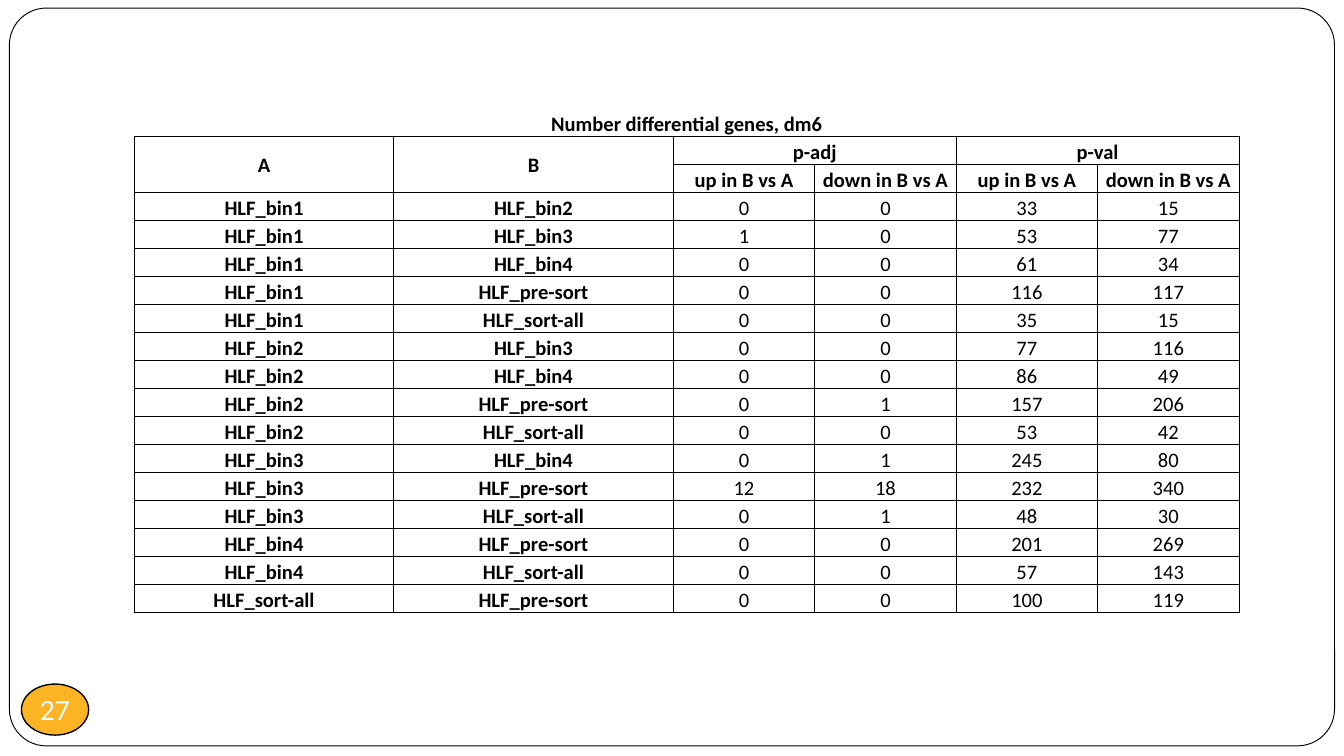
import lxml.etree
import pptx
import pptx.dml.color
import pptx.enum.shapes
import pptx.enum.text
import pptx.oxml.ns
import pptx.util
from pptx.util import Inches

BLACK = pptx.dml.color.RGBColor(0x00, 0x00, 0x00)
WHITE = pptx.dml.color.RGBColor(0xFF, 0xFF, 0xFF)
AMBER = pptx.dml.color.RGBColor(0xFC, 0xB4, 0x24)

TABLE_WIDTH = 8.22
TABLE_HEIGHT = 3.75
SAMPLE_WIDTHS = [1.93, 2.08]
COUNT_WIDTH = (TABLE_WIDTH - sum(SAMPLE_WIDTHS)) / 4
COLUMN_WIDTHS = SAMPLE_WIDTHS + [COUNT_WIDTH] * 4
DIRECTIONS = ["up in B vs A", "down in B vs A"]
HEADER_ROWS = [
    ["Number differential genes, dm6", "", "", "", "", ""],
    ["A", "B", "p-adj", "", "p-val", ""],
    ["", "", *DIRECTIONS, *DIRECTIONS],
]
GENE_ROWS = [
    ["HLF_bin1", "HLF_bin2", 0, 0, 33, 15],
    ["HLF_bin1", "HLF_bin3", 1, 0, 53, 77],
    ["HLF_bin1", "HLF_bin4", 0, 0, 61, 34],
    ["HLF_bin1", "HLF_pre-sort", 0, 0, 116, 117],
    ["HLF_bin1", "HLF_sort-all", 0, 0, 35, 15],
    ["HLF_bin2", "HLF_bin3", 0, 0, 77, 116],
    ["HLF_bin2", "HLF_bin4", 0, 0, 86, 49],
    ["HLF_bin2", "HLF_pre-sort", 0, 1, 157, 206],
    ["HLF_bin2", "HLF_sort-all", 0, 0, 53, 42],
    ["HLF_bin3", "HLF_bin4", 0, 1, 245, 80],
    ["HLF_bin3", "HLF_pre-sort", 12, 18, 232, 340],
    ["HLF_bin3", "HLF_sort-all", 0, 1, 48, 30],
    ["HLF_bin4", "HLF_pre-sort", 0, 0, 201, 269],
    ["HLF_bin4", "HLF_sort-all", 0, 0, 57, 143],
    ["HLF_sort-all", "HLF_pre-sort", 0, 0, 100, 119],
]
# First row, first column, last row, last column
MERGES = [(0, 0, 0, 5), (1, 0, 2, 0), (1, 1, 2, 1), (1, 2, 1, 3), (1, 4, 1, 5)]


def add_borders(cell, visible_sides):
    """Draw thin black lines on the visible sides and none on the others."""
    properties = cell._tc.get_or_add_tcPr()
    for side in "LRTB":
        line = lxml.etree.SubElement(
            properties, pptx.oxml.ns.qn(f"a:ln{side}"), w=str(pptx.util.Pt(0.5)))
        if side in visible_sides:
            fill = lxml.etree.SubElement(line, pptx.oxml.ns.qn("a:solidFill"))
            lxml.etree.SubElement(fill, pptx.oxml.ns.qn("a:srgbClr"), val=str(BLACK))
        else:
            lxml.etree.SubElement(line, pptx.oxml.ns.qn("a:noFill"))


def add_outlined_shape(kind, left, top, width, height, color, line_width):
    shape = slide.shapes.add_shape(
        kind, Inches(left), Inches(top), Inches(width), Inches(height))
    shape.shadow.inherit = False
    shape.fill.solid()
    shape.fill.fore_color.rgb = color
    shape.line.color.rgb = BLACK
    shape.line.width = pptx.util.Pt(line_width)
    return shape


# Widescreen slide, 16 to 9
presentation = pptx.Presentation()
presentation.slide_width = Inches(10)
presentation.slide_height = Inches(10 * 9 / 16)
slide = presentation.slides.add_slide(presentation.slide_layouts[6])

# Rounded frame around the slide
frame = add_outlined_shape(
    pptx.enum.shapes.MSO_SHAPE.ROUNDED_RECTANGLE, 0.07, 0.06, 9.86, 5.49, WHITE, 0.5)
frame.adjustments[0] = 0.05

# Slide number badge
badge = add_outlined_shape(
    pptx.enum.shapes.MSO_SHAPE.OVAL, 0.16, 5.09, 0.5, 0.38, AMBER, 0.75)
text_frame = badge.text_frame
text_frame.margin_left = text_frame.margin_right = 0
text_frame.margin_top = text_frame.margin_bottom = 0
text_frame.word_wrap = False
text_frame.vertical_anchor = pptx.enum.text.MSO_ANCHOR.MIDDLE
paragraph = text_frame.paragraphs[0]
paragraph.text = "27"
paragraph.alignment = pptx.enum.text.PP_ALIGN.CENTER
paragraph.font.name = "Lato"
paragraph.font.size = pptx.util.Pt(14)
paragraph.font.color.rgb = WHITE

# Table grid
table_rows = HEADER_ROWS + GENE_ROWS
table = slide.shapes.add_table(
    len(table_rows), len(COLUMN_WIDTHS), Inches(1), Inches(0.81),
    Inches(TABLE_WIDTH), Inches(TABLE_HEIGHT)).table
table.first_row = False
table.horz_banding = False
for column, width in zip(table.columns, COLUMN_WIDTHS):
    column.width = Inches(width)
for row in table.rows:
    row.height = Inches(TABLE_HEIGHT / len(table_rows))
for first_row, first_column, last_row, last_column in MERGES:
    table.cell(first_row, first_column).merge(table.cell(last_row, last_column))

# Table cells: headings and sample names are bold, counts are not
for row_index, values in enumerate(table_rows):
    for column_index, value in enumerate(values):
        cell = table.cell(row_index, column_index)
        add_borders(cell, "B" if row_index == 0 else "LRTB")
        cell.fill.background()
        cell.margin_left = cell.margin_right = cell.margin_top = Inches(0.01)
        cell.margin_bottom = 0
        spans_two_rows = row_index == 1 and column_index < 2
        cell.vertical_anchor = (
            pptx.enum.text.MSO_ANCHOR.MIDDLE if spans_two_rows
            else pptx.enum.text.MSO_ANCHOR.BOTTOM)
        paragraph = cell.text_frame.paragraphs[0]
        paragraph.text = str(value)
        paragraph.alignment = pptx.enum.text.PP_ALIGN.CENTER
        paragraph.font.name = "Calibri"
        paragraph.font.size = pptx.util.Pt(11)
        paragraph.font.bold = isinstance(value, str)
        paragraph.font.color.rgb = BLACK

presentation.save("out.pptx")
